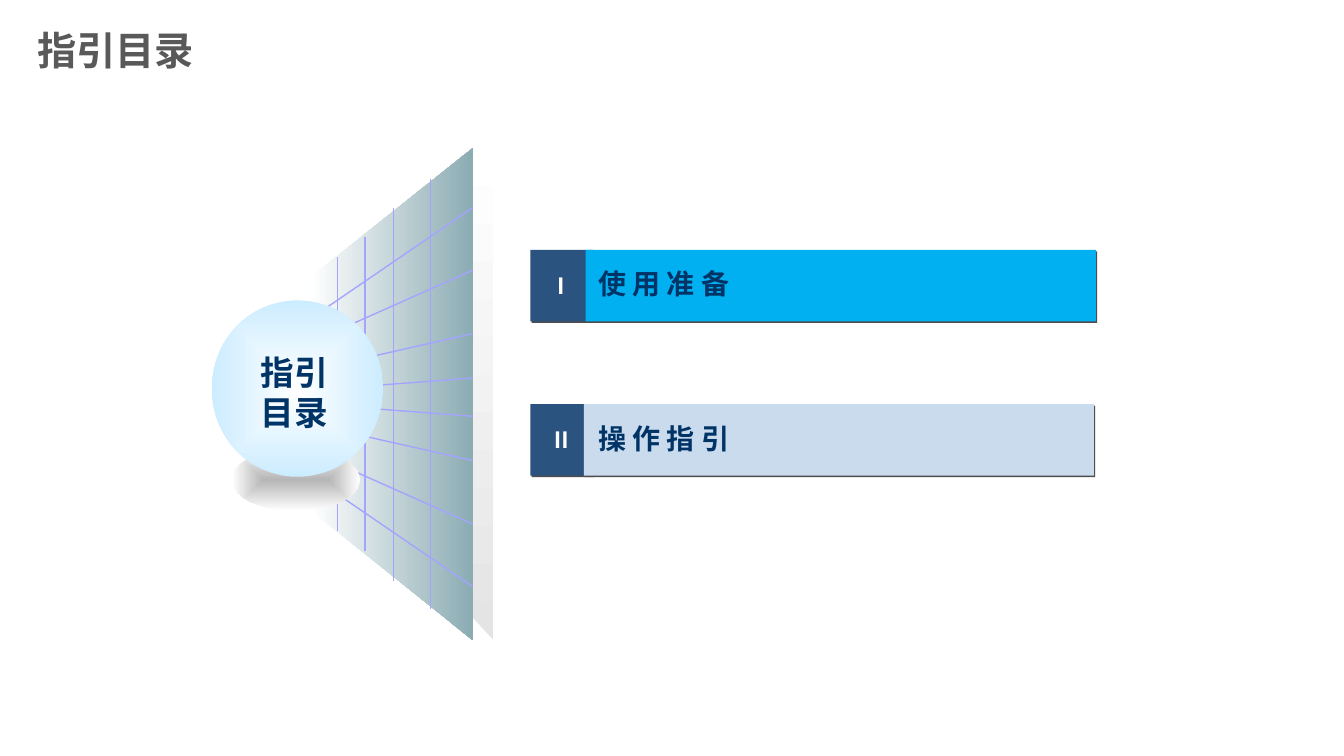
from dataclasses import dataclass

from lxml.etree import SubElement
from pptx import Presentation
from pptx.dml.color import RGBColor
from pptx.enum.shapes import MSO_CONNECTOR as Link, MSO_SHAPE as Shape
from pptx.enum.text import MSO_ANCHOR as Anchor, PP_ALIGN as Align
from pptx.oxml import parse_xml
from pptx.oxml.ns import nsdecls, qn
from pptx.util import Inches, Pt


@dataclass(frozen=True)
class Theme:
    """Colours, type sizes and font of the slide."""
    font: str = "Noto Sans CJK SC"
    title: str = "595959"
    navy: str = "003366"
    badge: str = "2A5380"
    bright: str = "00B0F0"
    pale: str = "CADBEE"
    white: str = "FFFFFF"
    shadow: str = "4D4D4D"
    grid: str = "A4A4FF"
    wall: str = "8BACB3"
    edge: str = "E4E4E4"
    sky: str = "CCECFF"
    ground: str = "B6B6B6"
    title_size: int = 28
    ball_size: int = 24
    label_size: int = 20
    badge_size: int = 16


class Board:
    """Draws styled elements on the current slide."""

    def __init__(self, slide, theme):
        self.slide = slide
        self.theme = theme
        self.layer = slide.shapes

    def group(self):
        """Direct the next elements into a new group."""
        self.layer = self.slide.shapes.add_group_shape().shapes

    def ungroup(self):
        """Direct the next elements onto the slide itself."""
        self.layer = self.slide.shapes

    def letter(self, shape, lines, size, color, align=Align.LEFT,
               anchor=Anchor.MIDDLE, wrap=False, spacing=None):
        """Fill a shape with bold paragraphs in one style."""
        frame = shape.text_frame
        frame.word_wrap = wrap
        frame.vertical_anchor = anchor
        frame.text = "\n".join(lines)
        for paragraph in frame.paragraphs:
            paragraph.alignment = align
            if spacing:
                paragraph.line_spacing = spacing
            font = paragraph.font
            font.size, font.bold, font.name = Pt(size), True, self.theme.font
            font.color.rgb = RGBColor.from_string(color)
            defaults = paragraph._p.pPr.find(qn("a:defRPr"))
            SubElement(defaults, qn("a:ea"), typeface=self.theme.font)

    def text(self, box, lines, size, color, **style):
        """Add a text box."""
        self.letter(self.layer.add_textbox(*map(Inches, box)), lines, size, color, **style)

    def shape(self, kind, box, fill=None):
        """Add a preset shape without outline or shadow."""
        shape = self.layer.add_shape(kind, *map(Inches, box))
        shape.shadow.inherit = False
        shape.line.fill.background()
        if fill:
            shape.fill.solid()
            shape.fill.fore_color.rgb = RGBColor.from_string(fill)
        else:
            shape.fill.background()
        return shape

    def block(self, box, fill):
        """Add a rectangle with a thin hard shadow."""
        block = self.shape(Shape.RECTANGLE, box, fill)
        effects = block._element.spPr.find(qn("a:effectLst"))
        effects.append(parse_xml(
            f'<a:outerShdw {nsdecls("a")} blurRad="0" dist="{Pt(1.4)}" dir="2700000" '
            f'algn="ctr" rotWithShape="0"><a:srgbClr val="{self.theme.shadow}"/></a:outerShdw>'))
        return block

    def oval(self, box, center, rim):
        """Add an ellipse shaded from its centre to its rim."""
        oval = self.shape(Shape.OVAL, box)
        properties = oval._element.spPr
        properties.replace(properties.find(qn("a:noFill")), parse_xml(
            f'<a:gradFill {nsdecls("a")} rotWithShape="1"><a:gsLst>'
            f'<a:gs pos="0"><a:srgbClr val="{center}"/></a:gs>'
            f'<a:gs pos="100000"><a:srgbClr val="{rim}"/></a:gs></a:gsLst>'
            '<a:path path="shape"><a:fillToRect l="50000" t="50000" r="50000" b="50000"/>'
            '</a:path></a:gradFill>'))

    def panel(self, corners, start, end, angle):
        """Add a closed outline with a linear gradient."""
        points = [(Inches(x), Inches(y)) for x, y in corners]
        builder = self.layer.build_freeform(*points[0])
        builder.add_line_segments(points[1:], close=True)
        panel = builder.convert_to_shape()
        panel.shadow.inherit = False
        panel.line.fill.background()
        panel.fill.gradient()
        panel.fill.gradient_angle = angle
        for stop, color in zip(panel.fill.gradient_stops, (start, end)):
            stop.color.rgb = RGBColor.from_string(color)

    def line(self, x1, y1, x2, y2):
        """Add a thin grid line."""
        line = self.layer.add_connector(Link.STRAIGHT, *map(Inches, (x1, y1, x2, y2)))
        line.line.width = Pt(1)
        line.line.color.rgb = RGBColor.from_string(self.theme.grid)
        SubElement(line._element.spPr, qn("a:effectLst"))


def draw_chapter(board, top, left, numeral, heading, fill):
    """Draw one chapter bar with its numeral."""
    theme = board.theme
    board.group()
    badge = board.block((5.26, top, 0.62, 0.71), theme.badge)
    board.letter(badge, [numeral], theme.badge_size, theme.white, align=Align.CENTER)
    board.block((left, top, 5.06, 0.71), fill)
    label = board.shape(Shape.ROUNDED_RECTANGLE, (5.81, top + 0.08, 4.8, 0.51))
    board.letter(label, [heading], theme.label_size, theme.navy)


def draw_wall(board):
    """Draw the receding wall and its grid, mirrored about its axis."""
    theme = board.theme
    wall_axis, ray_axis, right = 3.91, 3.94, 4.69
    board.group()
    board.panel([(4.89, 6.34), (4.64, 6.07), (4.64, 1.74), (4.89, 1.47)],
                theme.white, theme.edge, 270)
    board.panel([(right, 6.35), (3.08, 5.06), (3.08, 2.75), (right, 1.47)],
                theme.white, theme.wall, 0)
    for left, near, far in ((3.12, 3.38, 2.68), (3.05, 3.68, 3.31),
                            (3.12, 3.87, 3.75), (3.11, 3.14, 2.06)):
        board.line(left, near, right, far)
        board.line(left, 2 * ray_axis - near, right, 2 * ray_axis - far)
    for x, top in ((4.27, 1.78), (3.9, 2.06), (3.62, 2.35), (3.35, 2.55)):
        board.line(x, top, x, 2 * wall_axis - top)


def main():
    """Build and save the contents slide."""
    deck = Presentation()
    deck.slide_width, deck.slide_height = Inches(13.33), Inches(7.5)
    theme = Theme()
    board = Board(deck.slides.add_slide(deck.slide_layouts[6]), theme)

    draw_chapter(board, 2.48, 5.81, "I", "使 用 准 备", theme.bright)
    draw_chapter(board, 4.01, 5.79, "Ⅱ", "操 作 指 引", theme.pale)
    draw_wall(board)

    board.group()
    board.oval((2.3, 4.45, 1.27, 0.62), theme.ground, theme.white)
    board.oval((2.1, 2.98, 1.7, 1.75), theme.white, theme.sky)
    board.ungroup()
    board.text((2.48, 3.44, 0.88, 0.91), ["指引", "目录"], theme.ball_size, theme.navy,
               align=Align.CENTER, anchor=Anchor.TOP)
    board.text((0.27, 0.17, 11.84, 0.7), ["指引目录"], theme.title_size, theme.title,
               wrap=True, spacing=0.9)
    deck.save("out.pptx")


if __name__ == "__main__":
    main()
